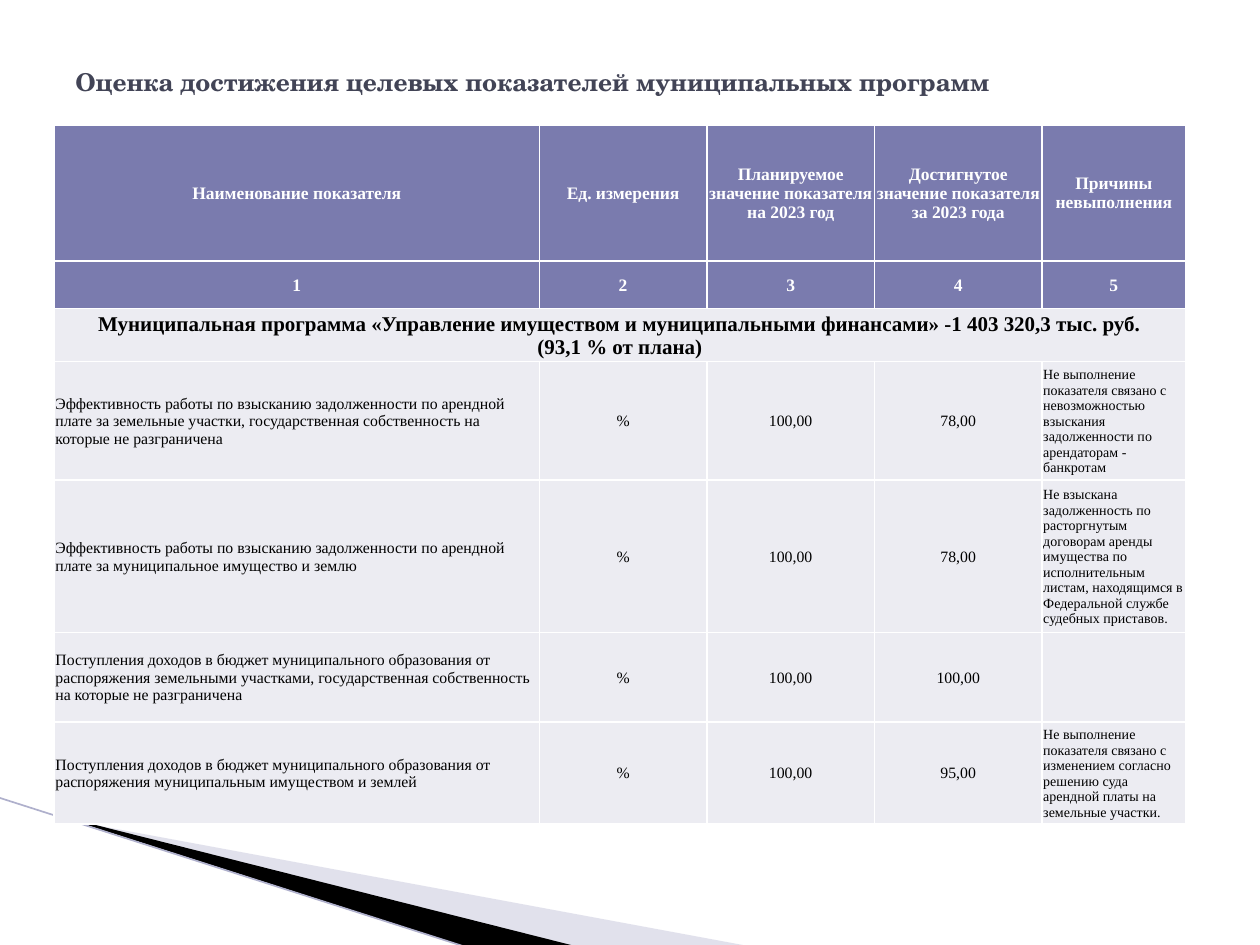
from lxml.etree import SubElement
from pptx import Presentation
from pptx.dml.color import RGBColor
from pptx.enum.shapes import MSO_CONNECTOR
from pptx.enum.text import MSO_ANCHOR, PP_ALIGN
from pptx.oxml.ns import qn
from pptx.util import Inches, Pt

THEME = {
    "title": "424456", "header": "7A7BAE", "body": "ECECF2", "border": "FFFFFF",
    "header_text": "FFFFFF", "text": "000000",
    "pale_wedge": "B6B6D1", "dark_wedge": "000000", "edge": "AFB0CC",
    "title_font": "TeX Gyre Schola", "table_font": "Times New Roman",
    "title_size": 14, "header_size": 10, "program_size": 12,
    "body_size": 9, "reason_size": 8,
}

TITLE = "Оценка достижения целевых показателей муниципальных программ"
HEADERS = [
    "Наименование показателя",
    "Ед. измерения",
    "Планируемое значение показателя на 2023 год",
    "Достигнутое значение показателя за 2023 года",
    "Причины невыполнения",
]
PROGRAM = ("Муниципальная программа «Управление имуществом и муниципальными "
           "финансами» -1 403 320,3 тыс. руб.\n(93,1 % от плана)")
INDICATORS = [
    ("Эффективность работы по взысканию задолженности по арендной плате за земельные "
     "участки, государственная собственность на которые не разграничена",
     "%", "100,00", "78,00",
     "Не выполнение показателя связано с невозможностью взыскания задолженности по "
     "арендаторам - банкротам"),
    ("Эффективность работы по взысканию задолженности по арендной плате за "
     "муниципальное имущество и землю",
     "%", "100,00", "78,00",
     "Не взыскана задолженность по расторгнутым договорам аренды имущества по "
     "исполнительным листам, находящимся в Федеральной службе судебных приставов."),
    ("Поступления доходов в бюджет муниципального образования от распоряжения "
     "земельными участками, государственная собственность на которые не разграничена",
     "%", "100,00", "100,00", ""),
    ("Поступления доходов в бюджет муниципального образования от распоряжения "
     "муниципальным имуществом и землей",
     "%", "100,00", "95,00",
     "Не выполнение показателя связано с изменением согласно решению суда арендной "
     "платы на земельные участки."),
]
COLUMN_WIDTHS = [3.85, 1.33, 1.33, 1.33, 1.14]
ROW_HEIGHTS = [1.08, 0.38, 0.42, 0.87, 1.12, 0.71, 0.75]
WEDGES = [
    ([(0.55, 6.51), (5.95, 7.51), (4.56, 7.51), (0.55, 6.5)], "pale_wedge", 40),
    ([(0.53, 6.49), (4.57, 7.51), (3.72, 7.52), (0.54, 6.5)], "dark_wedge", 100),
]


def color(name):
    return RGBColor.from_string(THEME[name])


def write(frame, text, *, size, ink, font="table_font", bold=False, align=PP_ALIGN.LEFT):
    frame.word_wrap = True
    paragraph = frame.paragraphs[0]
    paragraph.text = text
    paragraph.alignment = align
    for style in [paragraph.font] + [run.font for run in paragraph.runs]:
        style.name = THEME[font]
        style.size = Pt(THEME[size])
        style.bold = bold
        style.color.rgb = color(ink)


def format_cell(cell, fill):
    cell.vertical_anchor = MSO_ANCHOR.MIDDLE
    cell.margin_left = cell.margin_right = cell.margin_top = Inches(0.01)
    cell.margin_bottom = 0
    properties = cell._tc.get_or_add_tcPr()
    for side in ("lnL", "lnR", "lnT", "lnB"):
        border = SubElement(properties, qn(f"a:{side}"), w=str(Pt(1)))
        solid = SubElement(border, qn("a:solidFill"))
        SubElement(solid, qn("a:srgbClr"), val=THEME["border"])
    cell.fill.solid()
    cell.fill.fore_color.rgb = color(fill)


def add_wedge(slide, points, fill, opacity):
    start, *corners = [(Inches(x), Inches(y)) for x, y in points]
    builder = slide.shapes.build_freeform(*start)
    builder.add_line_segments(corners, close=True)
    wedge = builder.convert_to_shape()
    wedge.shadow.inherit = False
    wedge.line.fill.background()
    wedge.fill.solid()
    wedge.fill.fore_color.rgb = color(fill)
    if opacity < 100:
        tint = wedge._element.spPr.find(qn("a:solidFill"))[0]
        SubElement(tint, qn("a:alpha"), val=str(opacity * 1000))


def add_edge(slide):
    edge = slide.shapes.add_connector(
        MSO_CONNECTOR.STRAIGHT, Inches(-0.01), Inches(6.33), Inches(3.71), Inches(7.52))
    edge.line.color.rgb = color("edge")
    edge.line.width = Pt(0.95)
    SubElement(edge._element.spPr, qn("a:effectLst"))


def add_title(slide):
    title = slide.shapes.add_textbox(Inches(0.5), Inches(0.3), Inches(9), Inches(0.69))
    title.text_frame.vertical_anchor = MSO_ANCHOR.MIDDLE
    write(title.text_frame, TITLE, size="title_size", ink="title",
          font="title_font", bold=True)


def add_indicator_table(slide):
    numbers = [str(number) for number in range(1, len(HEADERS) + 1)]
    program_row = [PROGRAM] + [""] * (len(HEADERS) - 1)
    rows = [HEADERS, numbers, program_row, *INDICATORS]
    table = slide.shapes.add_table(
        len(rows), len(HEADERS), Inches(0.43), Inches(0.99),
        Inches(sum(COLUMN_WIDTHS)), Inches(sum(ROW_HEIGHTS))).table
    for column, width in zip(table.columns, COLUMN_WIDTHS):
        column.width = Inches(width)
    for row, height in zip(table.rows, ROW_HEIGHTS):
        row.height = Inches(height)

    header_style = {"size": "header_size", "ink": "header_text", "bold": True,
                    "align": PP_ALIGN.CENTER}
    program_style = {"size": "program_size", "ink": "text", "bold": True,
                     "align": PP_ALIGN.CENTER}
    name_style = {"size": "body_size", "ink": "text"}
    value_style = {**name_style, "align": PP_ALIGN.CENTER}
    reason_style = {"size": "reason_size", "ink": "text"}
    indicator_styles = [name_style, value_style, value_style, value_style, reason_style]
    row_styles = [[header_style] * 5, [header_style] * 5, [program_style] * 5]
    row_styles += [indicator_styles] * len(INDICATORS)

    for r, (texts, styles) in enumerate(zip(rows, row_styles)):
        for c, (text, style) in enumerate(zip(texts, styles)):
            cell = table.cell(r, c)
            format_cell(cell, "header" if r < 2 else "body")
            write(cell.text_frame, text, **style)
    table.cell(2, 0).merge(table.cell(2, len(HEADERS) - 1))


def main():
    presentation = Presentation()
    presentation.slide_width = Inches(10)
    presentation.slide_height = Inches(7.5)
    slide = presentation.slides.add_slide(presentation.slide_layouts[6])
    for points, fill, opacity in WEDGES:
        add_wedge(slide, points, fill, opacity)
    add_edge(slide)
    add_title(slide)
    add_indicator_table(slide)
    presentation.save("out.pptx")


if __name__ == "__main__":
    main()
